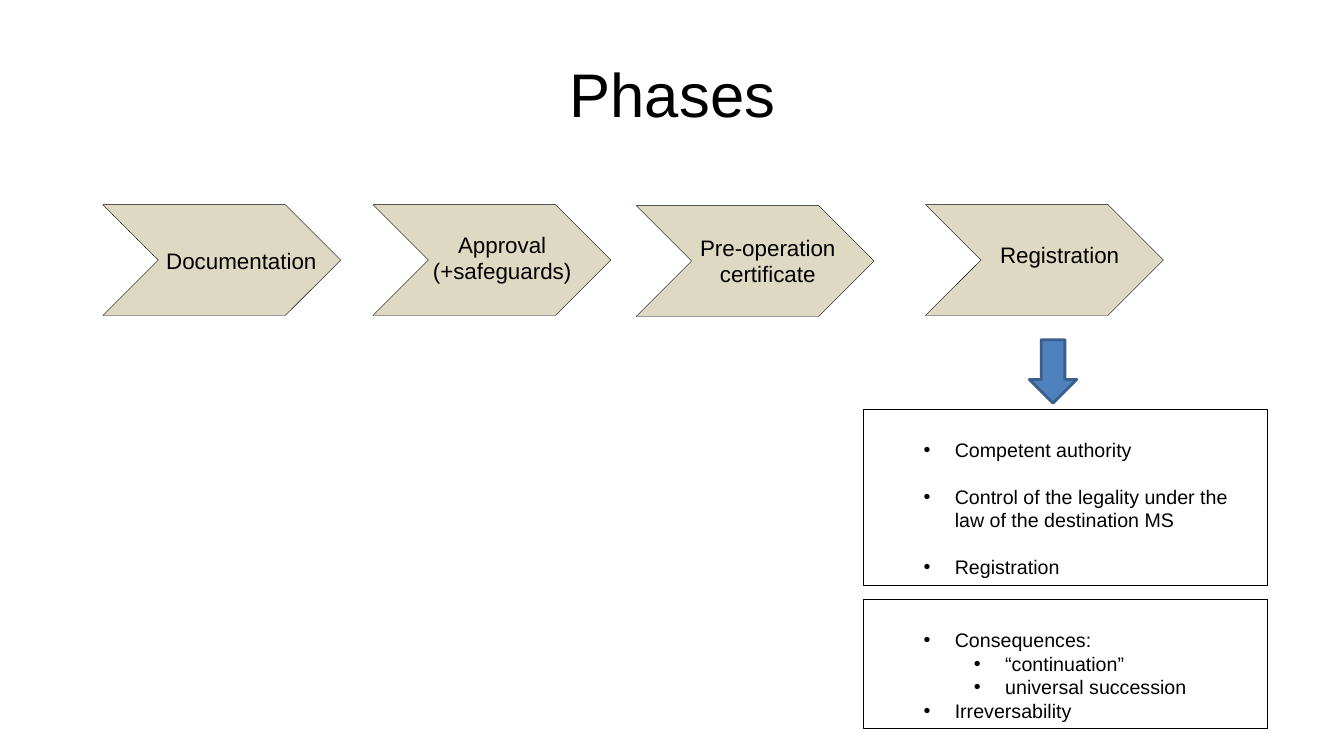
"""Build the slide on the phases of a cross-border operation."""
import pptx
import pptx.util
import pptx.dml.color
import pptx.enum.shapes
import pptx.enum.text
import pptx.oxml
import pptx.oxml.ns

SCALE = 9144
BLACK = pptx.dml.color.RGBColor(0x00, 0x00, 0x00)
SAND = pptx.dml.color.RGBColor(0xDD, 0xD9, 0xC3)
BLUE = pptx.dml.color.RGBColor(0x4F, 0x81, 0xBD)
NAVY = pptx.dml.color.RGBColor(0x3A, 0x5F, 0x8C)
KIND = pptx.enum.shapes.MSO_SHAPE
ALIGN = pptx.enum.text.PP_ALIGN
ANCHOR = pptx.enum.text.MSO_ANCHOR
FIT = pptx.enum.text.MSO_AUTO_SIZE


def px(count):
    return pptx.util.Emu(count * SCALE)


def apply(target, values):
    for name, value in values.items():
        setattr(target, name, value)


class Deck:
    def __init__(self, font):
        self.font = font
        self.file = pptx.Presentation()
        apply(self.file, {"slide_width": px(1333), "slide_height": px(750)})
        self.slide = self.file.slides.add_slide(self.file.slide_layouts[3])

    def place(self, shape, box):
        names = ("left", "top", "width", "height")
        apply(shape, dict(zip(names, map(px, box))))

    def style(self, para, text, size, **form):
        para.text = text
        apply(para, form)
        apply(para.font, {"name": self.font, "size": pptx.util.Pt(size)})
        para.font.color.rgb = BLACK

    def edge(self, shape, color, width):
        shape.line.color.rgb = color
        shape.line.width = pptx.util.Pt(width)

    def title(self, text, box):
        shape = self.slide.shapes.title
        self.place(shape, box)
        shape.text_frame.vertical_anchor = ANCHOR.MIDDLE
        self.style(shape.text_frame.paragraphs[0], text, 44, alignment=ALIGN.CENTER)

    def shape(self, kind, box, fill, line, width):
        shape = self.slide.shapes.add_shape(kind, *map(px, box))
        shape.shadow.inherit = False
        shape.fill.solid()
        shape.fill.fore_color.rgb = fill
        self.edge(shape, line, width)

    def label(self, lines, box, align):
        frame = self.slide.shapes.add_textbox(*map(px, box)).text_frame
        frame.word_wrap = True
        for row, text in enumerate(lines):
            para = frame.add_paragraph() if row else frame.paragraphs[0]
            self.style(para, text, 16, alignment=align)

    def list(self, slot, items, box, gap):
        shape = self.slide.placeholders[slot]
        self.place(shape, box)
        self.edge(shape, BLACK, 0.5)
        frame = shape.text_frame
        apply(frame, {
            "word_wrap": True, "auto_size": FIT.NONE,
            "vertical_anchor": ANCHOR.TOP, "margin_top": px(28),
        })
        for row, (level, text) in enumerate(items):
            para = frame.add_paragraph() if row else frame.paragraphs[0]
            space = pptx.util.Pt(gap if row else 0)
            self.style(para, text, 14, level=level, space_before=space)
            self.bullet(para, 31 + 50 * level)

    def bullet(self, para, left):
        props = para._p.get_or_add_pPr()
        props.set("marL", str(px(left)))
        props.set("indent", str(px(-31)))
        mark = f'<a:buChar {pptx.oxml.ns.nsdecls("a")} char="•"/>'
        rest = props.find(pptx.oxml.ns.qn("a:defRPr"))
        rest.addprevious(pptx.oxml.parse_xml(mark))


PHASES = [
    ((102, 203), ["Documentation"], (155, 240, 173, 37), ALIGN.LEFT),
    ((370, 203), ["Approval", "(+safeguards)"], (407, 224, 182, 64), ALIGN.CENTER),
    ((631, 204), ["Pre-operation", "certificate"], (675, 227, 173, 64), ALIGN.CENTER),
    ((918, 203), ["Registration"], (982, 234, 150, 37), ALIGN.LEFT),
]
CHECKS = [
    (1, "Competent authority"),
    (1, "Control of the legality under the law of the destination MS"),
    (1, "Registration"),
]
EFFECTS = [
    (1, "Consequences:"),
    (2, "“continuation”"),
    (2, "universal succession"),
    (1, "Irreversability"),
]


def main():
    deck = Deck("Arial")
    deck.title("Phases", (67, 30, 1200, 125))
    for spot, lines, box, align in PHASES:
        deck.shape(KIND.CHEVRON, (*spot, 236, 110), SAND, BLACK, 0.25)
        deck.label(lines, box, align)
    deck.list(1, CHECKS, (856, 406, 401, 175), 16.8)
    deck.shape(KIND.DOWN_ARROW, (1021, 337, 47, 63), BLUE, NAVY, 2)
    deck.list(2, EFFECTS, (856, 595, 401, 128), 0)
    deck.file.save("out.pptx")


if __name__ == "__main__":
    main()
